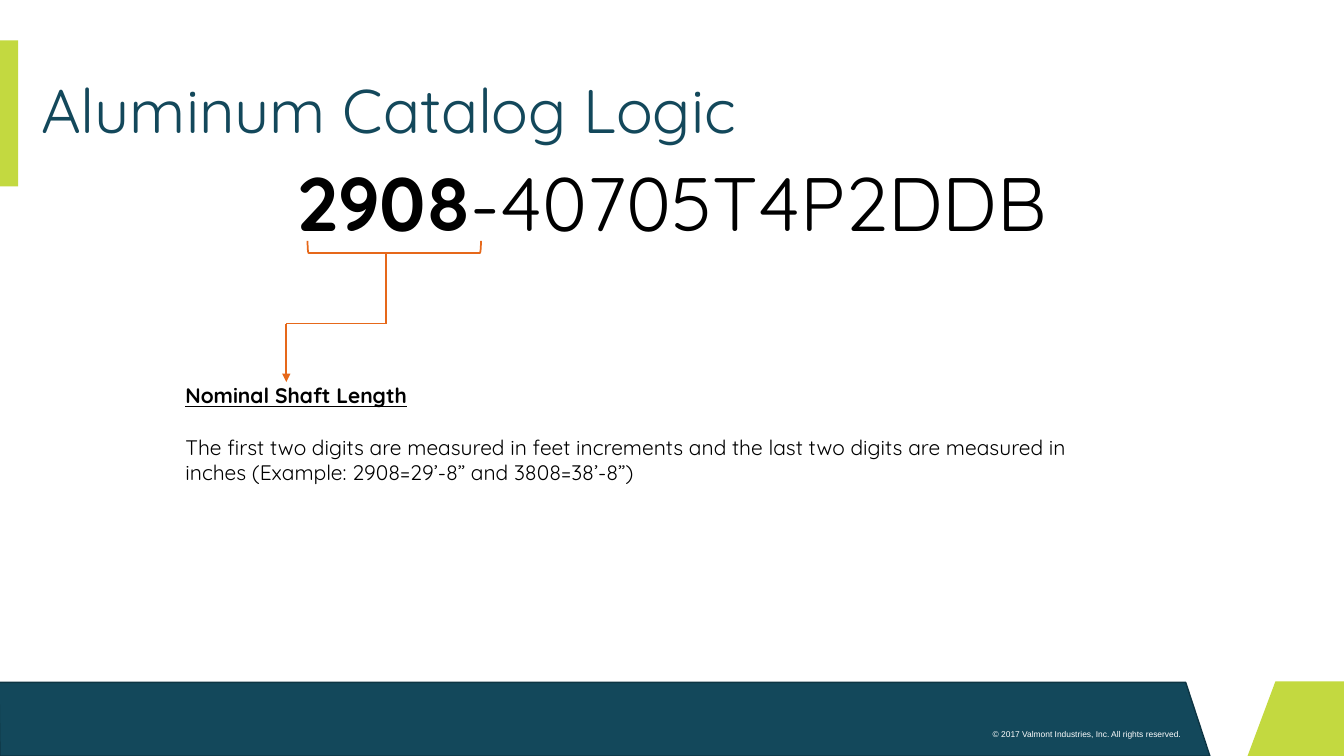
from dataclasses import dataclass

from lxml.etree import SubElement
from pptx import Presentation
from pptx.dml.color import RGBColor
from pptx.enum.shapes import MSO_CONNECTOR, MSO_SHAPE
from pptx.enum.text import MSO_ANCHOR, MSO_AUTO_SIZE, PP_ALIGN
from pptx.oxml.ns import qn
from pptx.util import Inches, Pt


@dataclass(frozen=True)
class Theme:
    teal: str = "13485B"
    teal_edge: str = "0E3543"
    lime: str = "C3D940"
    orange: str = "E6681A"
    black: str = "000000"
    white: str = "FFFFFF"
    font: str = "Quicksand"
    footer_font: str = "Arial"
    title_size: float = 44
    code_size: float = 54
    body_size: float = 15
    footer_size: float = 6
    line_width: float = 1.25


class SlideBuilder:
    def __init__(self, page, theme):
        self.page = page
        self.theme = theme

    def paint(self, shape, fill=None, line=None, width=1):
        shape.shadow.inherit = False
        if fill:
            shape.fill.solid()
            shape.fill.fore_color.rgb = RGBColor.from_string(fill)
        else:
            shape.fill.background()
        if line:
            shape.line.color.rgb = RGBColor.from_string(line)
            shape.line.width = Pt(width)
        else:
            shape.line.fill.background()

    def polygon(self, points, fill, line=None):
        corners = [(Inches(x), Inches(y)) for x, y in points]
        builder = self.page.shapes.build_freeform(*corners[0])
        builder.add_line_segments(corners[1:], close=True)
        self.paint(builder.convert_to_shape(), fill, line)

    def preset(self, kind, frame, fill=None, line=None, rotation=0):
        shape = self.page.shapes.add_shape(kind, *map(Inches, frame))
        shape.rotation = rotation
        self.paint(shape, fill, line, self.theme.line_width)

    def connector(self, start, end, arrow=False):
        line = self.page.shapes.add_connector(
            MSO_CONNECTOR.STRAIGHT, *map(Inches, start + end))
        line.line.color.rgb = RGBColor.from_string(self.theme.orange)
        line.line.width = Pt(self.theme.line_width)
        if arrow:
            SubElement(line.line._get_or_add_ln(), qn("a:tailEnd"), type="triangle")
        SubElement(line._element.spPr, qn("a:effectLst"))

    def text(self, frame, paragraphs, size, color, font=None, wrap=True,
             align=PP_ALIGN.LEFT, anchor=MSO_ANCHOR.TOP, grow=True):
        """Add a text box; each paragraph is a list of (words, bold, underline)."""
        box = self.page.shapes.add_textbox(*map(Inches, frame))
        text_frame = box.text_frame
        text_frame.word_wrap = wrap
        text_frame.vertical_anchor = anchor
        text_frame.auto_size = (
            MSO_AUTO_SIZE.SHAPE_TO_FIT_TEXT if grow else MSO_AUTO_SIZE.NONE)
        for index, spans in enumerate(paragraphs):
            para = text_frame.add_paragraph() if index else text_frame.paragraphs[0]
            para.alignment = align
            for words, bold, underline in spans:
                span = para.add_run()
                span.text = words
                span.font.name = font or self.theme.font
                span.font.size = Pt(size)
                span.font.bold = bold
                span.font.underline = underline
                span.font.color.rgb = RGBColor.from_string(color)
        return box


def add_frame(slide, theme):
    slide.polygon([(0, 7.5), (-0.01, 6.77), (11.76, 6.77), (12, 7.5)],
                  theme.teal, theme.teal_edge)
    slide.polygon([(13.34, 6.76), (12.65, 6.76), (12.37, 7.51), (13.34, 7.51)],
                  theme.lime)
    slide.preset(MSO_SHAPE.RECTANGLE, (0, 0.4, 0.18, 1.45), fill=theme.lime)
    slide.text((9.31, 7.18, 2.5, 0.2),
               [[("© 2017 Valmont Industries, Inc. All rights reserved.", False, False)]],
               theme.footer_size, theme.white, theme.footer_font, align=PP_ALIGN.RIGHT)


def add_callout(slide, theme):
    label_x, bracket_x = 2.84, 3.83
    bracket_y, bend_y, arrow_y = 2.51, 3.21, 3.79
    slide.preset(MSO_SHAPE.RIGHT_BRACKET, (3.85, 1.59, 0.12, 1.72),
                 line=theme.orange, rotation=90)
    slide.connector((label_x, bend_y), (label_x, arrow_y), arrow=True)
    slide.connector((bracket_x, bracket_y), (bracket_x, bend_y))
    slide.connector((label_x, bend_y), (bracket_x, bend_y))


def add_wording(slide, theme):
    title = slide.text((0.31, 0.4, 13.03, 1.45),
                       [[("Aluminum Catalog Logic", False, False)]],
                       theme.title_size, theme.teal, anchor=MSO_ANCHOR.MIDDLE, grow=False)
    title.text_frame.paragraphs[0].line_spacing = 0.9
    slide.text((2.84, 1.5, 7.65, 1.01),
               [[("2908", True, False), ("-40705T4P2DDB", False, False)]],
               theme.code_size, theme.black, wrap=False, align=PP_ALIGN.CENTER)
    explanation = slide.text(
        (1.74, 3.75, 9.42, 1.11),
        [[("Nominal Shaft Length", True, True)],
         [("The first two digits are measured in feet increments and the last two "
           "digits are measured in inches (Example: 2908=29’-8” and 3808=38’-8”)",
           False, False)]],
        theme.body_size, theme.black)
    explanation.text_frame.paragraphs[1].space_before = Pt(18.5)


def main():
    deck = Presentation()
    deck.slide_width, deck.slide_height = Inches(13.33), Inches(7.5)
    theme = Theme()
    slide = SlideBuilder(deck.slides.add_slide(deck.slide_layouts[6]), theme)
    add_frame(slide, theme)
    add_callout(slide, theme)
    add_wording(slide, theme)
    deck.save("out.pptx")


if __name__ == "__main__":
    main()
